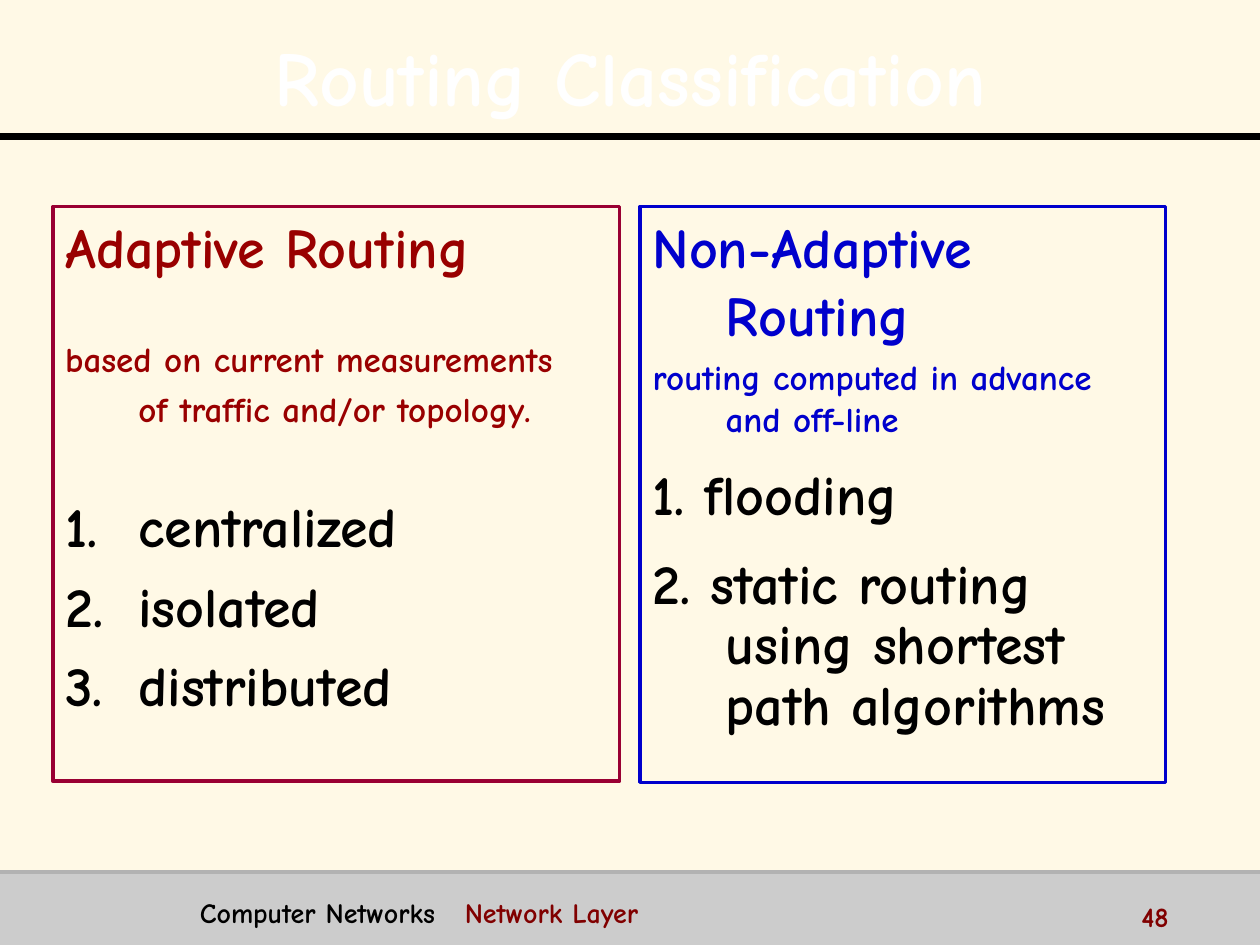
from lxml import etree
from pptx import Presentation, util as u
from pptx.dml.color import RGBColor
from pptx.enum import shapes, text
from pptx.oxml import ns

Pt = u.Pt
COLORS = {
    "cream": "FFF9E6", "white": "FFFFFF", "black": "000000",
    "band": "CCCCCC", "edge": "B2B2B2", "maroon": "800000",
    "adaptive": "990000", "adaptive_border": "990033", "static": "0000CC",
}


def color(name):
    return RGBColor.from_string(COLORS[name])


def add_run(paragraph, words, size, color_name):
    run = paragraph.add_run()
    run.text = words
    for name, value in {"name": "Comic Neue", "size": Pt(size), "bold": True}.items():
        setattr(run.font, name, value)
    run.font.color.rgb = color(color_name)
    return run


presentation = Presentation()
presentation.slide_width, presentation.slide_height = Pt(720), Pt(540)
slide = presentation.slides.add_slide(presentation.slide_layouts[6])
slide.background.fill.solid()
slide.background.fill.fore_color.rgb = color("cream")

band = slide.shapes.add_shape(shapes.MSO_SHAPE.RECTANGLE, Pt(0), Pt(498.2), Pt(720), Pt(41.8))
band.shadow.inherit = False
band.fill.solid()
band.fill.fore_color.rgb = color("band")
band.line.fill.background()

for y, color_name, width in [(77.8, "black", 4), (498.2, "edge", 2)]:
    rule = slide.shapes.add_connector(shapes.MSO_CONNECTOR.STRAIGHT, Pt(0), Pt(y), Pt(720), Pt(y))
    rule.line.color.rgb = color(color_name)
    rule.line.width = Pt(width)
    etree.SubElement(rule._element.spPr, ns.qn("a:effectLst"))

LABELS = [
    ((14.4, 9.4, 691.9, 62.6), [("Routing Classification", 44, "white")],
     {"alignment": text.PP_ALIGN.CENTER, "line_spacing": 1.1}, text.MSO_ANCHOR.MIDDLE, None),
    ((107.1, 508.3, 518.6, 22.3), [("Computer Networks\t", 16, "black"), ("Network Layer", 16, "maroon")],
     {}, text.MSO_ANCHOR.TOP, 151.4),
    ((645.1, 510.5, 72, 18), [("48", 16, "maroon")], {}, text.MSO_ANCHOR.TOP, None),
]
for box, runs, formats, anchor, tab in LABELS:
    label = slide.shapes.add_textbox(*map(Pt, box))
    label.text_frame.word_wrap = True
    label.text_frame.vertical_anchor = anchor
    paragraph = label.text_frame.paragraphs[0]
    for name, value in formats.items():
        setattr(paragraph, name, value)
    if tab:
        tabs = etree.SubElement(paragraph._p.get_or_add_pPr(), ns.qn("a:tabLst"))
        etree.SubElement(tabs, ns.qn("a:tab"), pos=str(Pt(tab)), algn="l")
    for words, size, color_name in runs:
        run = add_run(paragraph, words, size, color_name)
        if color_name == "white":
            effects = etree.Element(ns.qn("a:effectLst"))
            shadow = etree.SubElement(effects, ns.qn("a:outerShdw"), dist=str(Pt(2)), dir="2700000", algn="tl")
            etree.SubElement(shadow, ns.qn("a:srgbClr"), val=COLORS["black"])
            run.font._element.find(ns.qn("a:solidFill")).addnext(effects)

HANG = 41.8
PANELS = [
    ((30.2, 118.1, 324, 328.3), "adaptive_border", [
        ("Adaptive Routing", 32, "adaptive", 0, 1, -HANG),
        ("based on current measurements", 20, "adaptive", 33, 1, -HANG),
        ("of traffic and/or topology.", 20, "adaptive", 4.5, 1, 0),
        ("1.\tcentralized", 32, "black", 35.5, 1, -HANG),
        ("2.\tisolated", 32, "black", 7, 1, -HANG),
        ("3.\tdistributed", 32, "black", 7, 1, -HANG),
    ]),
    ((365.8, 118.1, 300.2, 329), "static", [
        ("Non-Adaptive Routing", 32, "static", 0, 1, -HANG),
        ("routing computed in advance and off-line", 20, "static", 4.5, 1, -HANG),
        ("1. flooding", 32, "black", 16, 0.9, -HANG),
        ("2. static routing using shortest path algorithms", 32, "black", 16, 0.9, -HANG),
    ]),
]
for box, border, rows in PANELS:
    panel = slide.shapes.add_shape(shapes.MSO_SHAPE.RECTANGLE, *map(Pt, box))
    panel.shadow.inherit = False
    panel.fill.background()
    panel.line.color.rgb = color(border)
    panel.line.width = Pt(2)
    frame = panel.text_frame
    frame.word_wrap = True
    frame.vertical_anchor = text.MSO_ANCHOR.TOP
    for index, (words, size, color_name, before, spacing, indent) in enumerate(rows):
        paragraph = frame.add_paragraph() if index else frame.paragraphs[0]
        formats = {"alignment": text.PP_ALIGN.LEFT, "space_before": Pt(before), "line_spacing": float(spacing)}
        for name, value in formats.items():
            setattr(paragraph, name, value)
        properties = paragraph._p.get_or_add_pPr()
        properties.set("marL", str(Pt(HANG)))
        properties.set("indent", str(Pt(indent)))
        add_run(paragraph, words, size, color_name)

presentation.save("out.pptx")
